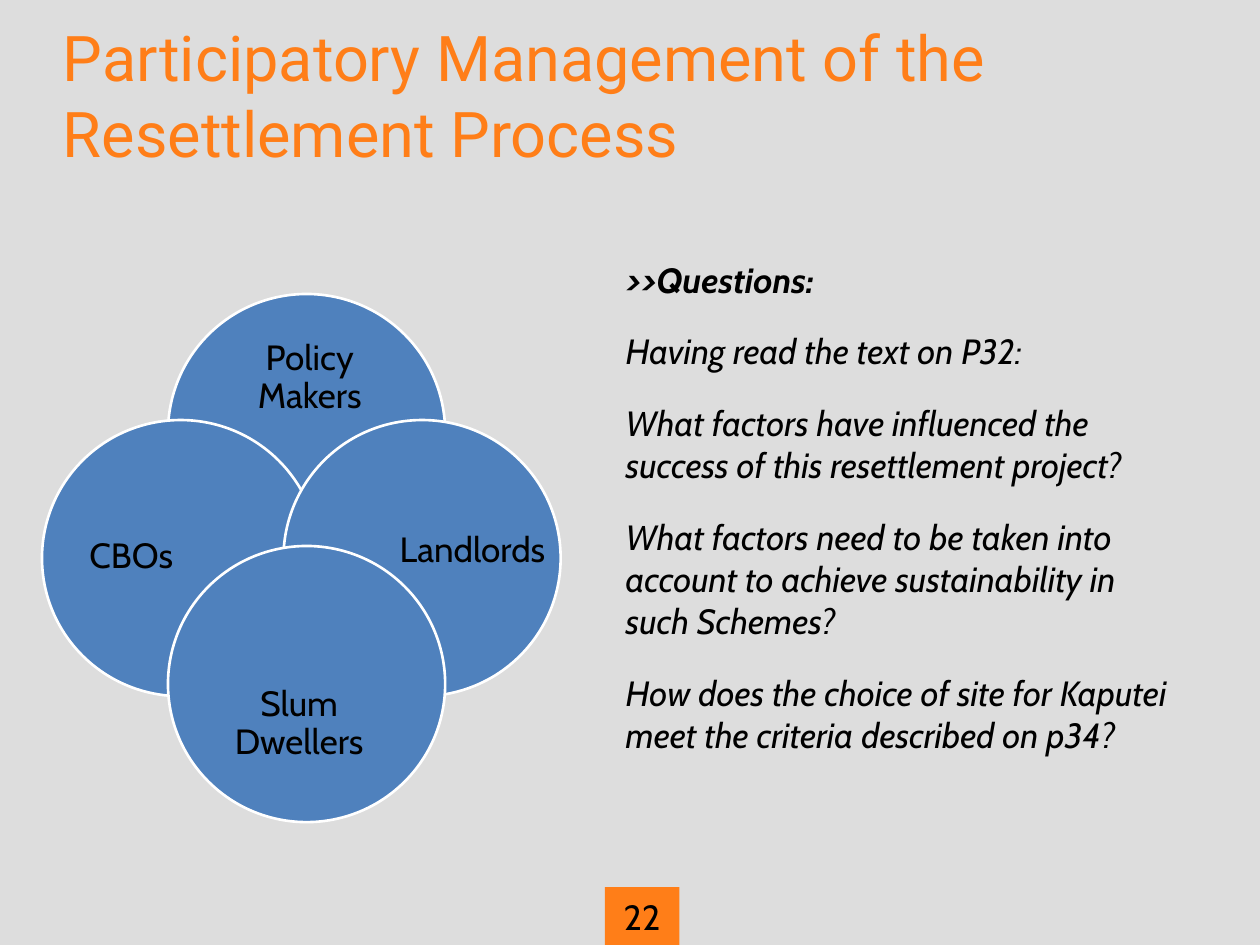
import pptx
import pptx.dml.color
import pptx.enum.shapes
import pptx.enum.text
import pptx.util

COLUMNS, ROWS = 120, 90
SLIDE_WIDTH = pptx.util.Inches(10)
SLIDE_HEIGHT = pptx.util.Inches(7.5)
CIRCLE_SIZE = (26.4, 26.3)
COLORS = {
    "background": "DDDDDD",
    "accent": "FF7E18",
    "circle": "4F81BD",
    "outline": "FFFFFF",
    "text": "000000",
}
QUESTIONS = [
    ">>Questions:",
    "Having read the text on P32:",
    "What factors have influenced the success of this resettlement project?",
    "What factors need to be taken into account to achieve sustainability in such Schemes?",
    "How does the choice of site for Kaputei meet the criteria described on p34?",
]
# Left and top of each circle, from back to front
CIRCLES = [(16, 28), (4, 40), (27, 40), (16, 52)]
# Label with its left, top, width and height
LABELS = [
    ("Policy Makers", (23.4, 30, 12.2, 12)),
    ("CBOs", (7, 47, 11, 12.2)),
    ("Slum Dwellers", (20, 63, 17, 12)),
    ("Landlords", (37, 50, 16, 5)),
]


def color(name):
    return pptx.dml.color.RGBColor.from_string(COLORS[name])


def place(left, top, width, height):
    """Turn columns and rows of the grid into slide lengths."""
    column, row = SLIDE_WIDTH / COLUMNS, SLIDE_HEIGHT / ROWS
    return [round(length) for length in (left * column, top * row, width * column, height * row)]


def format_paragraph(paragraph, font_name="Cabin", size=20, color_name="text", bold=False, italic=False):
    for run in paragraph.runs:
        font = run.font
        font.name = font_name
        font.size = pptx.util.Pt(size)
        font.bold = bold
        font.italic = italic
        font.color.rgb = color(color_name)


def add_text_box(slide, box, lines, inset, anchor):
    """Add a wrapping text box with one paragraph per line and return its text frame."""
    text_frame = slide.shapes.add_textbox(*place(*box)).text_frame
    text_frame.word_wrap = True
    text_frame.vertical_anchor = anchor
    text_frame.margin_left = text_frame.margin_right = pptx.util.Inches(inset)
    text_frame.margin_top = text_frame.margin_bottom = pptx.util.Inches(inset)
    text_frame.text = "\n".join(lines)
    return text_frame


def add_title(slide, title):
    text_frame = add_text_box(slide, (6, 2, 108, 14.2), [title], 0, pptx.enum.text.MSO_ANCHOR.BOTTOM)
    format_paragraph(text_frame.paragraphs[0], "Roboto", 36, "accent")


def add_questions(slide, lines):
    text_frame = add_text_box(slide, (59, 24, 54, 49), lines, 0.05, pptx.enum.text.MSO_ANCHOR.TOP)
    for index, paragraph in enumerate(text_frame.paragraphs):
        paragraph.space_before = pptx.util.Pt(5)
        paragraph.space_after = pptx.util.Pt(12)
        format_paragraph(paragraph, bold=index == 0, italic=True)


def add_filled_shape(slide, kind, box, fill_name):
    shape = slide.shapes.add_shape(kind, *place(*box))
    shape.shadow.inherit = False
    shape.fill.solid()
    shape.fill.fore_color.rgb = color(fill_name)
    return shape


def add_circle(slide, left, top):
    circle = add_filled_shape(slide, pptx.enum.shapes.MSO_SHAPE.OVAL, (left, top, *CIRCLE_SIZE), "circle")
    circle.line.color.rgb = color("outline")
    circle.line.width = pptx.util.Pt(1.5)


def add_label(slide, label, box):
    text_frame = add_text_box(slide, box, [label], 0.03, pptx.enum.text.MSO_ANCHOR.MIDDLE)
    paragraph = text_frame.paragraphs[0]
    paragraph.alignment = pptx.enum.text.PP_ALIGN.CENTER
    paragraph.line_spacing = 0.9
    format_paragraph(paragraph)


def add_page_number(slide, number):
    shape = add_filled_shape(slide, pptx.enum.shapes.MSO_SHAPE.RECTANGLE, (57.6, 84.5, 7.1, 5.5), "accent")
    shape.line.fill.background()
    shape.text_frame.text = number
    shape.text_frame.vertical_anchor = pptx.enum.text.MSO_ANCHOR.MIDDLE
    paragraph = shape.text_frame.paragraphs[0]
    paragraph.alignment = pptx.enum.text.PP_ALIGN.CENTER
    format_paragraph(paragraph)


def main():
    presentation = pptx.Presentation()
    presentation.slide_width = SLIDE_WIDTH
    presentation.slide_height = SLIDE_HEIGHT
    slide = presentation.slides.add_slide(presentation.slide_layouts[6])
    slide.background.fill.solid()
    slide.background.fill.fore_color.rgb = color("background")

    add_title(slide, "Participatory Management of the Resettlement Process")
    add_questions(slide, QUESTIONS)
    add_page_number(slide, "22")
    for left, top in CIRCLES:
        add_circle(slide, left, top)
    for label, box in LABELS:
        add_label(slide, label, box)

    presentation.save("out.pptx")


if __name__ == "__main__":
    main()
